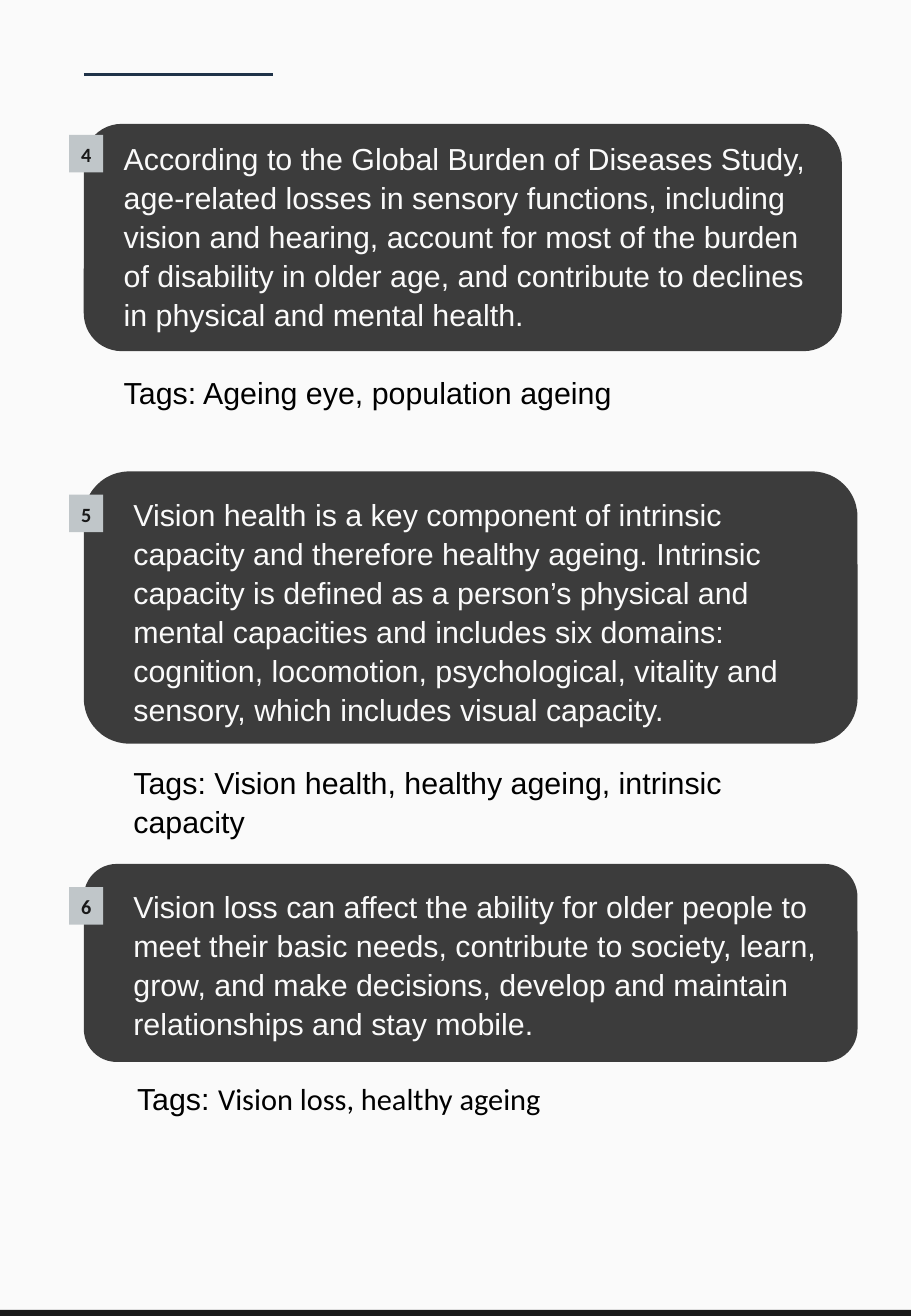
import pptx
import pptx.util
import pptx.dml.color
import pptx.enum.shapes
import pptx.enum.text
import lxml.etree
from pptx.util import Inches

SHAPES = pptx.enum.shapes.MSO_SHAPE


def paint(color_format, value):
    color_format.rgb = pptx.dml.color.RGBColor.from_string(value)


def add_block(page, area, spans=(), fill=None, outline=SHAPES.RECTANGLE, size=18, color="000000", bold=False):
    lengths = [Inches(value) for value in area]
    if fill:
        box = page.shapes.add_shape(outline, *lengths)
        box.shadow.inherit = False
        box.fill.solid()
        paint(box.fill.fore_color, fill)
        box.line.fill.background()
    else:
        box = page.shapes.add_textbox(*lengths)
    if not spans:
        return
    frame = box.text_frame
    frame.word_wrap = True
    frame.auto_size = pptx.enum.text.MSO_AUTO_SIZE.SHAPE_TO_FIT_TEXT
    frame.vertical_anchor = pptx.enum.text.MSO_ANCHOR.TOP
    para = frame.paragraphs[0]
    para.alignment = pptx.enum.text.PP_ALIGN.LEFT
    para.line_spacing = 1.07
    para.space_after = pptx.util.Pt(6)
    for text, font_name in spans:
        span = para.add_run()
        span.text = text
        span.font.name = font_name
        span.font.size = pptx.util.Pt(size)
        span.font.bold = bold
        paint(span.font.color, color)


deck = pptx.Presentation()
deck.slide_width = Inches(7.5)
deck.slide_height = Inches(10.83)
page = deck.slides.add_slide(deck.slide_layouts[6])
page.background.fill.solid()
paint(page.background.fill.fore_color, "FAFAFA")

rule = page.shapes.add_connector(
    pptx.enum.shapes.MSO_CONNECTOR.STRAIGHT, Inches(0.69), Inches(0.61), Inches(2.25), Inches(0.61)
)
paint(rule.line.color, "1F3248")
rule.line.width = pptx.util.Pt(1.75)
effects = pptx.oxml.ns.qn("a:effectLst")
lxml.etree.SubElement(rule.element.spPr, effects)

messages = [
    {
        "number": "4",
        "panel": (0.69, 1.02, 6.24, 1.87),
        "body": (0.92, 1.08, 5.9, 1.7),
        "badge_top": 1.11,
        "tags": (0.92, 3.01, 6.02, 0.4),
        "text": "According to the Global Burden of Diseases Study, age-related losses in sensory functions, "
        "including vision and hearing, account for most of the burden of disability in older age, "
        "and contribute to declines in physical and mental health.",
        "tag_spans": [("Tags: Ageing eye, population ageing", "Arial")],
    },
    {
        "number": "5",
        "panel": (0.69, 3.88, 6.37, 2.24),
        "body": (1, 4.01, 5.93, 2.02),
        "badge_top": 4.07,
        "tags": (1, 6.22, 6.02, 0.73),
        "text": "Vision health is a key component of intrinsic capacity and therefore healthy ageing. "
        "Intrinsic capacity is defined as a person’s physical and mental capacities and includes six domains: "
        "cognition, locomotion, psychological, vitality and sensory, which includes visual capacity.",
        "tag_spans": [("Tags: Vision health, healthy ageing, intrinsic capacity", "Arial")],
    },
    {
        "number": "6",
        "panel": (0.69, 7.11, 6.37, 1.63),
        "body": (1, 7.24, 5.93, 1.37),
        "badge_top": 7.3,
        "tags": (1.03, 8.82, 6.02, 0.41),
        "text": "Vision loss can affect the ability for older people to meet their basic needs, "
        "contribute to society, learn, grow, and make decisions, develop and maintain relationships "
        "and stay mobile.",
        "tag_spans": [("Tags: ", "Arial"), ("Vision loss, healthy ageing", "Calibri")],
    },
]

for message in messages:
    add_block(page, message["panel"], fill="3C3C3C", outline=SHAPES.ROUNDED_RECTANGLE)
    add_block(page, message["body"], [(message["text"], "Arial")], color="FAFAFA")
    add_block(
        page, (0.57, message["badge_top"], 0.28, 0.31), [(message["number"], "Calibri")],
        fill="C0C6C9", size=12, color="191919", bold=True,
    )
    add_block(page, message["tags"], message["tag_spans"])

add_block(page, (0, 10.78, 7.5, 0.05), fill="191919")

deck.save("out.pptx")
